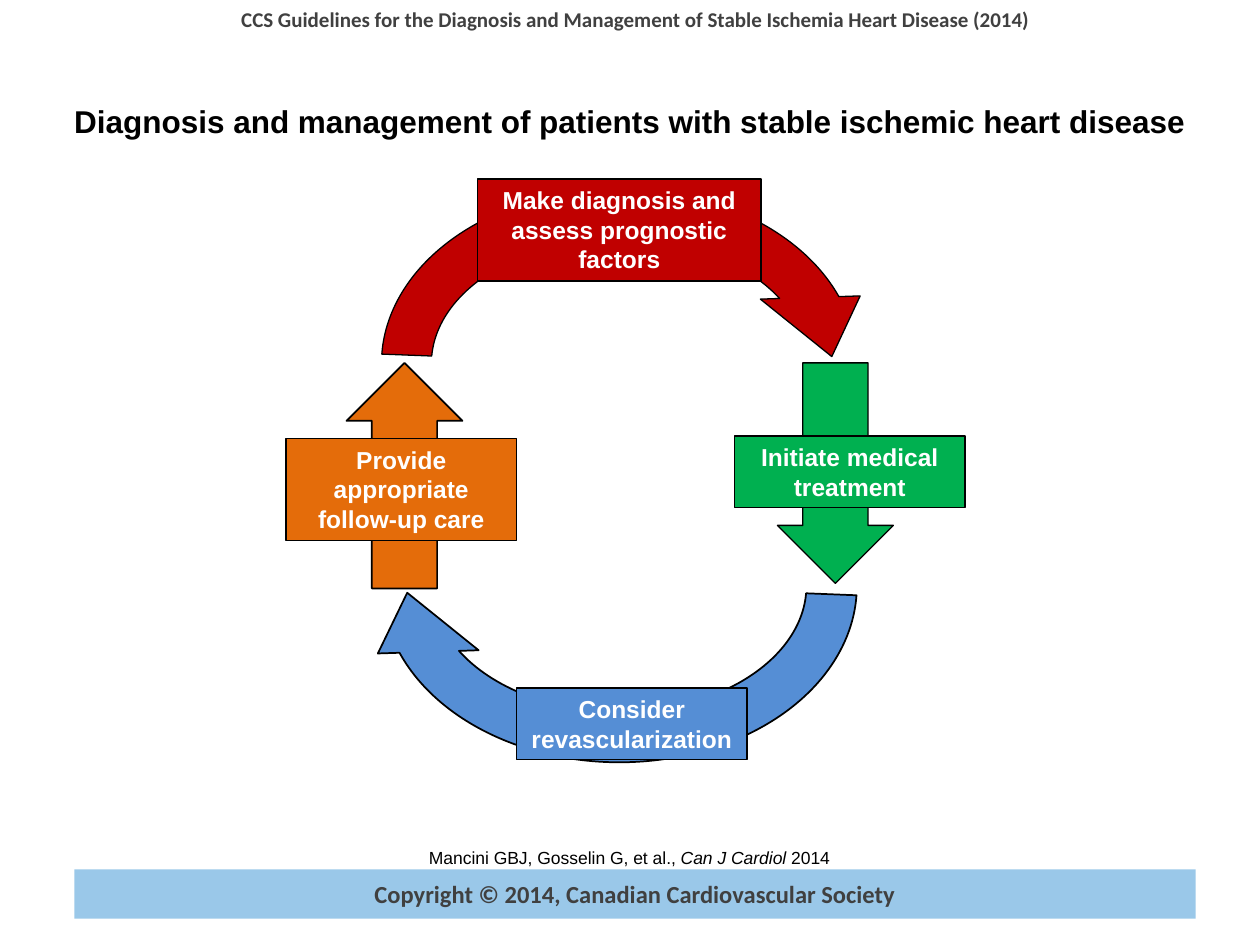
from dataclasses import dataclass

from pptx import Presentation
from pptx.dml.color import RGBColor
from pptx.enum.shapes import MSO_SHAPE
from pptx.enum.text import MSO_ANCHOR, MSO_AUTO_SIZE, PP_ALIGN
from pptx.util import Inches, Pt


@dataclass(frozen=True)
class Theme:
    heading_font: str = "Arial"
    banner_font: str = "Calibri"
    black: str = "000000"
    white: str = "FFFFFF"
    grey: str = "404040"
    banner: str = "9AC8E9"
    diagnosis: str = "C00000"
    treatment: str = "00B050"
    revascularization: str = "558ED5"
    follow_up: str = "E46C0A"
    title_size: int = 18
    label_size: int = 14
    header_size: int = 12
    citation_size: int = 10


THEME = Theme()
CURVE = (0.125, 10.316, 204.577, 109.356, 0.125)
STRAIGHT = (0.563, 0.5)


def rgb(value):
    return RGBColor.from_string(value)


def write(frame, paragraphs, size, color, font=THEME.heading_font, bold=True,
          anchor=MSO_ANCHOR.TOP):
    """Fill a frame with centred paragraphs, each a list of (text, italic) runs."""
    frame.word_wrap = True
    frame.auto_size = MSO_AUTO_SIZE.NONE
    frame.vertical_anchor = anchor
    for index, runs in enumerate(paragraphs):
        paragraph = frame.add_paragraph() if index else frame.paragraphs[0]
        paragraph.alignment = PP_ALIGN.CENTER
        for text, italic in runs:
            run = paragraph.add_run()
            run.text = text
            run.font.name = font
            run.font.size = Pt(size)
            run.font.bold = bold
            run.font.italic = italic
            run.font.color.rgb = rgb(color)


def plain(*lines):
    return [[(line, False)] for line in lines]


def add_filled(shapes, preset, box, fill, line_width=None):
    shape = shapes.add_shape(preset, *map(Inches, box))
    shape.shadow.inherit = False
    shape.fill.solid()
    shape.fill.fore_color.rgb = rgb(fill)
    if line_width is None:
        shape.line.fill.background()
    else:
        shape.line.color.rgb = rgb(THEME.black)
        shape.line.width = Pt(line_width)
    return shape


def add_arrow(shapes, preset, box, fill, adjustments, line_width, rotation):
    arrow = add_filled(shapes, preset, box, fill, line_width)
    for index, value in enumerate(adjustments):
        arrow.adjustments[index] = value
    arrow.rotation = rotation


def add_step(shapes, box, fill, *lines):
    step = add_filled(shapes, MSO_SHAPE.RECTANGLE, box, fill, 0.75)
    write(step.text_frame, plain(*lines), THEME.label_size, THEME.white)


def add_text(slide, box, paragraphs, size, color, **style):
    text_box = slide.shapes.add_textbox(*map(Inches, box))
    write(text_box.text_frame, paragraphs, size, color, **style)


def add_title(slide, box, text):
    title = slide.shapes.title
    title.left, title.top, title.width, title.height = map(Inches, box)
    write(title.text_frame, plain(text), THEME.title_size, THEME.black)


def add_banner(slide, box, text):
    banner = add_filled(slide.shapes, MSO_SHAPE.RECTANGLE, box, THEME.banner)
    write(banner.text_frame, plain(text), THEME.label_size, THEME.grey,
          font=THEME.banner_font, anchor=MSO_ANCHOR.MIDDLE)


def add_care_cycle(slide):
    """Four steps, each a label over its arrow, running clockwise."""
    curved, straight = MSO_SHAPE.CIRCULAR_ARROW, MSO_SHAPE.DOWN_ARROW
    steps = [
        (THEME.diagnosis, curved, (2.83, 1.3, 4.17, 3.17), CURVE, 0.75, 0,
         (3.79, 1.42, 2.25, 0.81), ["Make diagnosis and assess prognostic factors"]),
        (THEME.treatment, straight, (6.17, 2.88, 0.92, 1.75), STRAIGHT, 0.75, 0,
         (5.83, 3.46, 1.83, 0.57), ["Initiate medical treatment"]),
        (THEME.revascularization, curved, (2.83, 3.05, 4.17, 3.2), CURVE, 1, 180,
         (4.1, 5.46, 1.83, 0.57), ["Consider revascularization"]),
        (THEME.follow_up, straight, (2.75, 2.88, 0.92, 1.79), STRAIGHT, 1, 180,
         (2.27, 3.48, 1.83, 0.81), ["Provide appropriate", "follow-up care"]),
    ]
    cycle = slide.shapes.add_group_shape().shapes
    for color, preset, arrow_box, adjustments, width, rotation, label_box, lines in steps:
        add_arrow(cycle, preset, arrow_box, color, adjustments, width, rotation)
        add_step(cycle, label_box, color, *lines)


def main():
    presentation = Presentation()
    presentation.slide_width, presentation.slide_height = Inches(10), Inches(7.5)
    slide = presentation.slides.add_slide(presentation.slide_layouts[5])

    add_banner(slide, (0.59, 6.9, 8.9, 0.39),
               "Copyright © 2014, Canadian Cardiovascular Society")
    add_text(slide, (0.42, 0, 9.25, 0.61),
             plain("CCS Guidelines for the Diagnosis and Management of "
                   "Stable Ischemia Heart Disease (2014)"),
             THEME.header_size, THEME.grey, font=THEME.banner_font)
    add_text(slide, (0.5, 6.67, 8.99, 0.44),
             [[("Mancini GBJ, Gosselin G, et al., ", False),
               ("Can J Cardiol", True), (" 2014", False)]],
             THEME.citation_size, THEME.black, bold=False)
    add_care_cycle(slide)
    add_title(slide, (0, 0.76, 10, 0.4),
              "Diagnosis and management of patients with stable ischemic heart disease")

    presentation.save("out.pptx")


if __name__ == "__main__":
    main()
